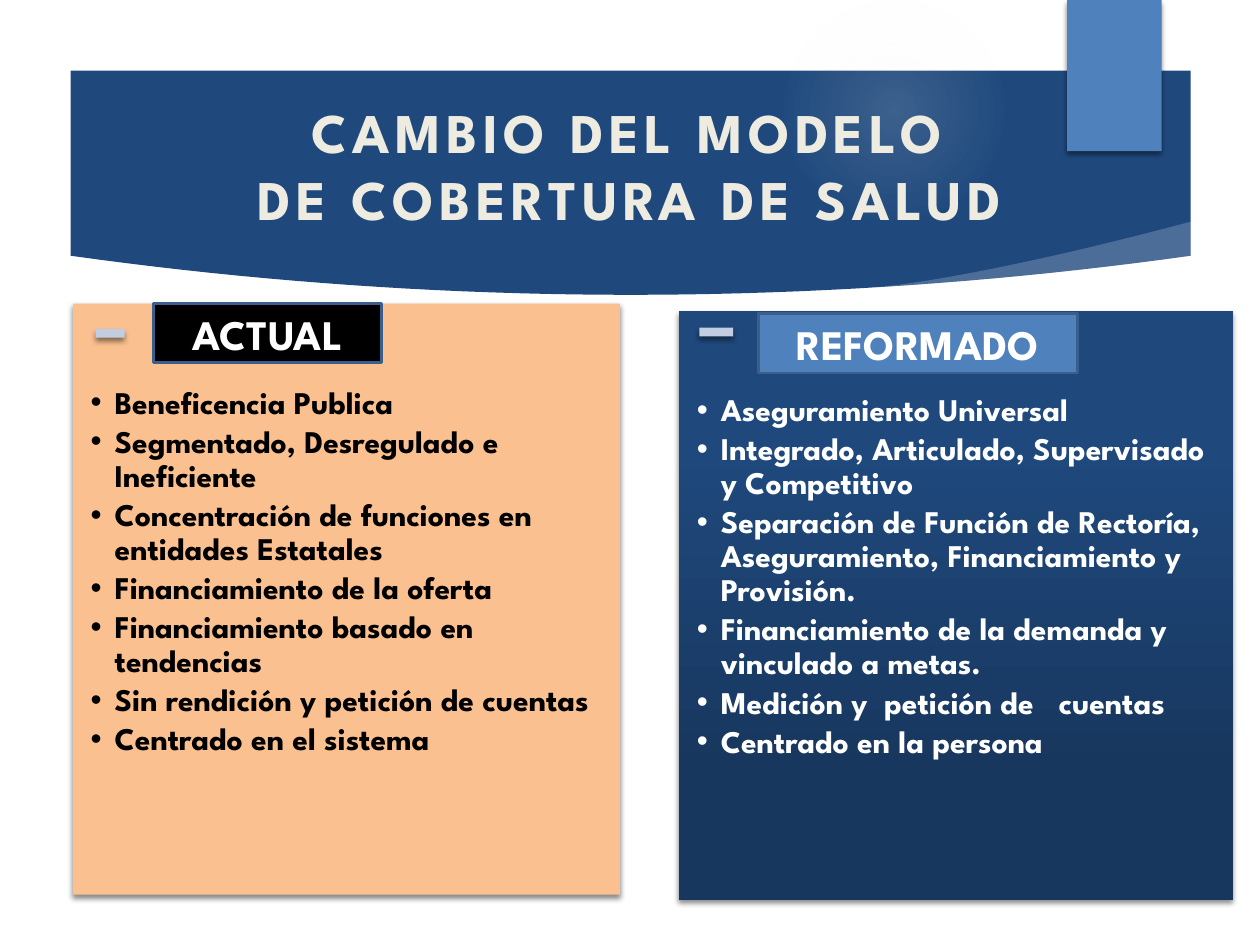
import pptx
import pptx.util
import pptx.dml.color
import pptx.enum.shapes
import pptx.enum.text
import pptx.oxml
import pptx.oxml.ns
from dataclasses import dataclass

Inches = pptx.util.Inches
ALIGN = pptx.enum.text.PP_ALIGN
ANCHOR = pptx.enum.text.MSO_ANCHOR
SHAPES = pptx.enum.shapes.MSO_SHAPE


@dataclass(frozen=True)
class Theme:
    font: str = "League Spartan"
    navy: str = "1F497D"
    deep_navy: str = "17375E"
    blue: str = "4F81BD"
    outline: str = "3A5F8C"
    peach: str = "FAC090"
    dash: str = "C2CDE1"
    cream: str = "EEECE1"
    glow: str = "F8F7F3"
    white: str = "FFFFFF"
    black: str = "000000"
    title_size: int = 32
    label_size: int = 24
    body_size: int = 18


THEME = Theme()

TITLE = "CAMBIO DEL MODELO\vDE COBERTURA DE SALUD"

PANELS = [
    {
        "label": "ACTUAL",
        "items": [
            "Beneficencia Publica",
            "Segmentado, Desregulado e Ineficiente",
            "Concentración de funciones en entidades Estatales",
            "Financiamiento de la oferta",
            "Financiamiento basado en tendencias",
            "Sin rendición y petición de cuentas",
            "Centrado en el sistema",
        ],
        "box": (0.58, 2.41, 4.34, 4.69),
        "dash_box": (0.76, 2.61, 0.23, 0.07),
        "label_box": (1.22, 2.41, 1.81, 0.47),
        "fill": THEME.peach,
        "label_fill": THEME.black,
        "color": THEME.black,
    },
    {
        "label": "REFORMADO",
        "items": [
            "Aseguramiento Universal",
            "Integrado, Articulado, Supervisado y Competitivo",
            "Separación de Función de Rectoría, Aseguramiento, Financiamiento y Provisión.",
            "Financiamiento de la demanda y vinculado a metas.",
            "Medición y  petición de   cuentas",
            "Centrado en la persona",
        ],
        "box": (5.39, 2.47, 4.40, 4.67),
        "dash_box": (5.55, 2.60, 0.27, 0.07),
        "label_box": (6.02, 2.49, 2.53, 0.47),
        "fill": (THEME.navy, THEME.deep_navy),
        "label_fill": THEME.blue,
        "color": THEME.white,
    },
]

BANNER_LEFT, BANNER_RIGHT, BANNER_TOP = 0.56, 9.45, 0.56
BANNER_SIDE, BANNER_LOW = 2.03, 2.34
SWOOSH_LEFT, SWOOSH_TOP = 6.90, 1.76
CURVE_STEPS = 40


def rgb(value):
    return pptx.dml.color.RGBColor.from_string(value)


def xml(tag, content="", **attributes):
    pairs = " ".join(f'{name}="{value}"' for name, value in attributes.items())
    namespace = pptx.oxml.ns.nsdecls("a")
    return pptx.oxml.parse_xml(f"<a:{tag} {namespace} {pairs}>{content}</a:{tag}>")


def color_xml(color, percent):
    return f'<a:srgbClr val="{color}"><a:alpha val="{percent * 1000}"/></a:srgbClr>'


def paint(shape, fill, line=None, shadow=False):
    shape.shadow.inherit = False
    if isinstance(fill, tuple):
        shape.fill.gradient()
        shape.fill.gradient_angle = 270
        for stop, color, position in zip(shape.fill.gradient_stops, fill, (0.23, 0.79)):
            stop.color.rgb = rgb(color)
            stop.position = position
    else:
        shape.fill.solid()
        shape.fill.fore_color.rgb = rgb(fill)
    if line:
        shape.line.color.rgb = rgb(line)
        shape.line.width = pptx.util.Pt(1.5)
    else:
        shape.line.fill.background()
    if shadow:
        effects = shape._element.spPr.find(pptx.oxml.ns.qn("a:effectLst"))
        effects.append(xml("outerShdw", color_xml(THEME.black, 45), blurRad=pptx.util.Pt(3),
                           dist=pptx.util.Pt(2), dir=5400000, rotWithShape=0))
    return shape


def add_box(slide, box, fill, kind=SHAPES.RECTANGLE, **format):
    return paint(slide.shapes.add_shape(kind, *map(Inches, box)), fill, **format)


def add_outline(slide, points, fill):
    corners = [(Inches(x), Inches(y)) for x, y in points]
    builder = slide.shapes.build_freeform(*corners[0])
    builder.add_line_segments(corners[1:], close=True)
    return paint(builder.convert_to_shape(), fill)


def write(shape, lines, size, color, align=ALIGN.CENTER, anchor=ANCHOR.MIDDLE,
          insets=(0.1, 0.05, 0.1, 0.05), bullet=False, spacing=0):
    frame = shape.text_frame
    frame.word_wrap = True
    frame.auto_size = pptx.enum.text.MSO_AUTO_SIZE.NONE
    frame.vertical_anchor = anchor
    frame.margin_left, frame.margin_top, frame.margin_right, frame.margin_bottom = map(Inches, insets)
    for index, line in enumerate(lines):
        paragraph = frame.paragraphs[0] if index == 0 else frame.add_paragraph()
        paragraph.text = line
        paragraph.alignment = align
        paragraph.space_before = pptx.util.Pt(0)
        if bullet:
            paragraph.line_spacing = 0.9
            paragraph.space_after = pptx.util.Pt(2.9)
            properties = paragraph._p.get_or_add_pPr()
            properties.set("marL", str(Inches(0.19)))
            properties.set("indent", str(Inches(-0.19)))
            properties.append(xml("buChar", char="•"))
        for run in paragraph.runs:
            run.font.name = THEME.font
            run.font.size = pptx.util.Pt(size)
            run.font.bold = True
            run.font.color.rgb = rgb(color)
            if spacing:
                run._r.get_or_add_rPr().set("spc", str(spacing * 100))


def place(slide, placeholder, box):
    placeholder.left, placeholder.top, placeholder.width, placeholder.height = map(Inches, box)
    slide.shapes._spTree.append(placeholder._element)


def banner_edge(x):
    middle = (BANNER_LEFT + BANNER_RIGHT) / 2
    ratio = (x - middle) / (BANNER_RIGHT - middle)
    return BANNER_LOW - (BANNER_LOW - BANNER_SIDE) * ratio ** 2


def steps(start, end):
    return [start + (end - start) * step / CURVE_STEPS for step in range(CURVE_STEPS + 1)]


def add_banner(slide):
    lower_edge = [(x, banner_edge(x)) for x in steps(BANNER_RIGHT, BANNER_LEFT)]
    add_outline(slide, [(BANNER_LEFT, BANNER_TOP), (BANNER_RIGHT, BANNER_TOP)] + lower_edge, THEME.navy)

    glow = add_box(slide, (6.22, 0, 1.75, 1.75), THEME.glow, kind=SHAPES.OVAL)
    stops = "".join(f'<a:gs pos="{position * 1000}">{color_xml(THEME.glow, alpha)}</a:gs>'
                    for position, alpha in ((0, 14), (36, 7), (73, 0)))
    center = '<a:path path="circle"><a:fillToRect l="50000" t="50000" r="50000" b="50000"/></a:path>'
    solid = glow._element.spPr.find(pptx.oxml.ns.qn("a:solidFill"))
    solid.getparent().replace(solid, xml("gradFill", f"<a:gsLst>{stops}</a:gsLst>{center}"))

    start = banner_edge(SWOOSH_LEFT)
    width = BANNER_RIGHT - SWOOSH_LEFT
    upper = [(x, start - (start - SWOOSH_TOP) * ((x - SWOOSH_LEFT) / width) ** 1.3)
             for x in steps(SWOOSH_LEFT, BANNER_RIGHT)]
    lower = [(x, banner_edge(x)) for x in steps(BANNER_RIGHT, SWOOSH_LEFT)]
    swoosh = add_outline(slide, upper + lower, THEME.white)
    swoosh._element.spPr.find(".//" + pptx.oxml.ns.qn("a:srgbClr")).append(xml("alpha", val=20000))

    add_box(slide, (8.47, 0, 0.75, 1.2), THEME.blue, shadow=True)


def add_panel(slide, panel, body):
    add_box(slide, panel["box"], panel["fill"], shadow=True)
    place(slide, body, panel["box"])
    write(body, panel["items"], THEME.body_size, panel["color"], align=ALIGN.LEFT,
          anchor=ANCHOR.TOP, insets=(0.14, 0.66, 0.14, 0.14), bullet=True)
    add_box(slide, panel["dash_box"], THEME.dash, shadow=True)
    label = add_box(slide, panel["label_box"], panel["label_fill"], line=THEME.outline)
    write(label, [panel["label"]], THEME.label_size, THEME.white)


def main():
    presentation = pptx.Presentation()
    presentation.slide_width, presentation.slide_height = Inches(10), Inches(7.5)
    slide = presentation.slides.add_slide(presentation.slide_layouts[3])
    title, *bodies = list(slide.placeholders)[:3]
    add_banner(slide)
    place(slide, title, (0.5, 0.52, 9, 1.57))
    write(title, [TITLE], THEME.title_size, THEME.cream, spacing=3)
    for panel, body in zip(PANELS, bodies):
        add_panel(slide, panel, body)
    presentation.save("out.pptx")


if __name__ == "__main__":
    main()
